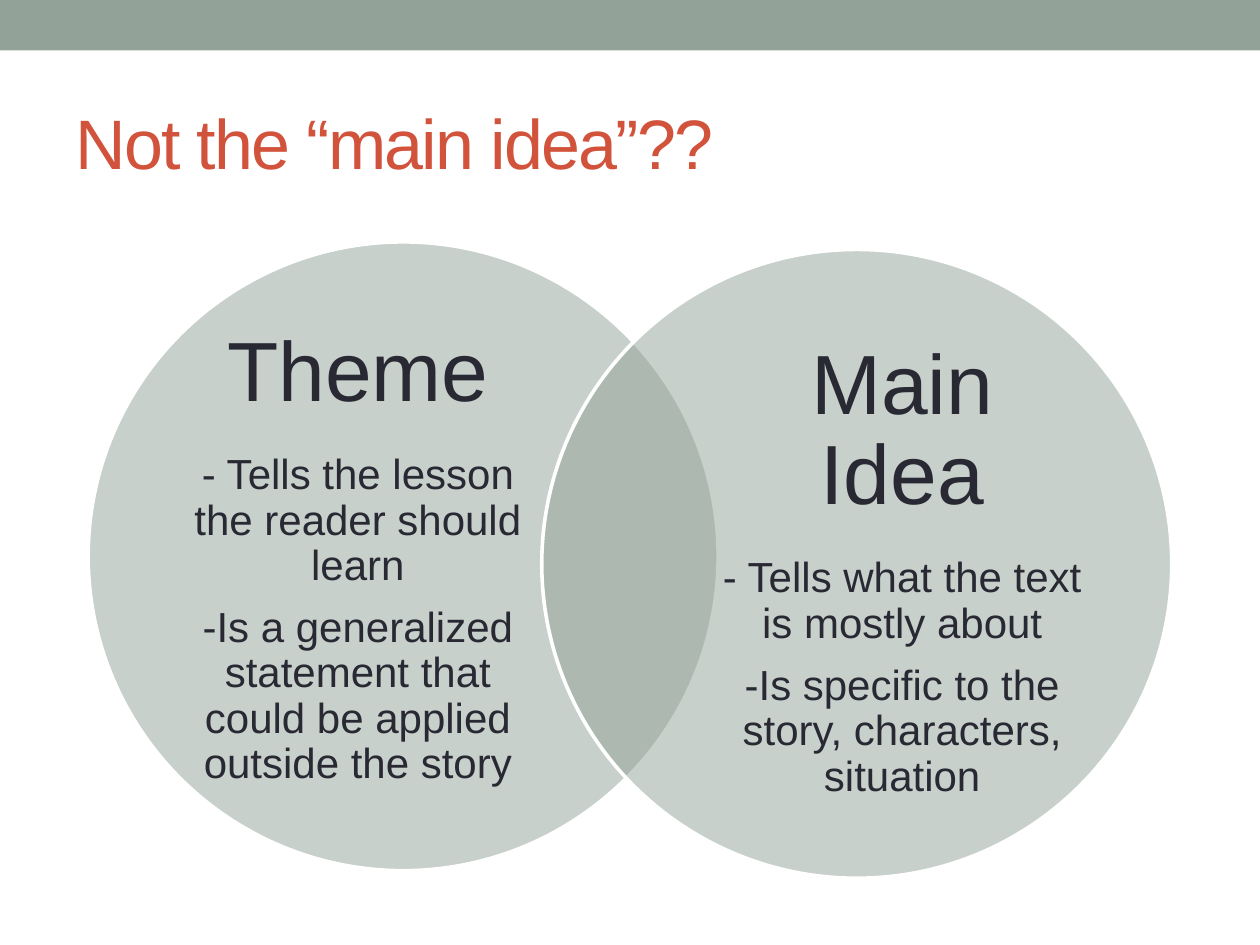
from dataclasses import dataclass

from lxml.etree import SubElement
from pptx import Presentation
from pptx.dml.color import RGBColor
from pptx.enum.shapes import MSO_SHAPE
from pptx.enum.text import MSO_ANCHOR, MSO_AUTO_SIZE, PP_ALIGN
from pptx.oxml.ns import qn
from pptx.util import Inches, Pt

COLORS = {
    "sage": "93A299",
    "title": "D2533C",
    "text": "292934",
    "white": "FFFFFF",
}
FONT = "Arial"


@dataclass
class VennCircle:
    left: float
    top: float
    text_left: float
    text_top: float
    heading: str
    points: list[str]


CIRCLES = [
    VennCircle(0.7, 1.92, 1.4, 2.61, "Theme", [
        "- Tells the lesson the reader should learn",
        "-Is a generalized statement that could be applied outside the story",
    ]),
    VennCircle(4.3, 1.98, 5.72, 2.71, "Main Idea", [
        "- Tells what the text is mostly about",
        "-Is specific to the story, characters, situation",
    ]),
]


def write_text(paragraph, text: str, *, size: float, color: str,
               align=PP_ALIGN.LEFT, line_spacing: float = 1.0,
               space_after: float = 0, tracking: float = 0) -> None:
    paragraph.alignment = align
    paragraph.line_spacing = line_spacing
    paragraph.space_after = Pt(space_after)
    run = paragraph.add_run()
    run.text = text
    run.font.name = FONT
    run.font.size = Pt(size)
    run.font.color.rgb = RGBColor.from_string(COLORS[color])
    if tracking:
        run._r.get_or_add_rPr().set("spc", str(round(tracking * 100)))


def add_filled_shape(slide, kind, left: float, top: float, width: float,
                     height: float, color: str):
    shape = slide.shapes.add_shape(
        kind, Inches(left), Inches(top), Inches(width), Inches(height))
    shape.shadow.inherit = False
    shape.fill.solid()
    shape.fill.fore_color.rgb = RGBColor.from_string(COLORS[color])
    shape.line.fill.background()
    return shape


def add_circle(slide, circle: VennCircle) -> None:
    shape = add_filled_shape(slide, MSO_SHAPE.OVAL, circle.left, circle.top,
                             5, 4.99, "sage")
    shape.line.color.rgb = RGBColor.from_string(COLORS["white"])
    shape.line.width = Pt(2.08)
    # Half-transparent fill, so that the overlap shows darker
    fill_color = shape._element.spPr.find(qn("a:solidFill"))[0]
    SubElement(fill_color, qn("a:alpha"), val="50000")


def add_circle_text(slide, circle: VennCircle) -> None:
    box = slide.shapes.add_textbox(
        Inches(circle.text_left), Inches(circle.text_top),
        Inches(2.88), Inches(3.55))
    frame = box.text_frame
    frame.word_wrap = True
    frame.vertical_anchor = MSO_ANCHOR.TOP
    frame.margin_left = frame.margin_right = 0
    frame.margin_top = frame.margin_bottom = 0
    write_text(frame.paragraphs[0], circle.heading, size=48, color="text",
               align=PP_ALIGN.CENTER, line_spacing=0.9, space_after=19.3)
    for point in circle.points:
        write_text(frame.add_paragraph(), point, size=24, color="text",
                   align=PP_ALIGN.CENTER, line_spacing=0.9, space_after=9.65)


def add_title(slide, text: str) -> None:
    title = slide.shapes.title
    title.left, title.top = Inches(0.5), Inches(0.58)
    title.width, title.height = Inches(9), Inches(1.08)
    frame = title.text_frame
    frame.auto_size = MSO_AUTO_SIZE.NONE
    frame.vertical_anchor = MSO_ANCHOR.MIDDLE
    write_text(frame.paragraphs[0], text, size=40, color="title", tracking=-1)


def main() -> None:
    presentation = Presentation()
    presentation.slide_width = Inches(10)
    presentation.slide_height = Inches(7.5)
    slide = presentation.slides.add_slide(presentation.slide_layouts[5])

    # Top band and title
    add_filled_shape(slide, MSO_SHAPE.RECTANGLE, 0, 0, 10, 0.4, "sage")
    add_title(slide, "Not the “main idea”??")

    # Venn diagram
    for circle in CIRCLES:
        add_circle(slide, circle)
        add_circle_text(slide, circle)

    presentation.save("out.pptx")


if __name__ == "__main__":
    main()
